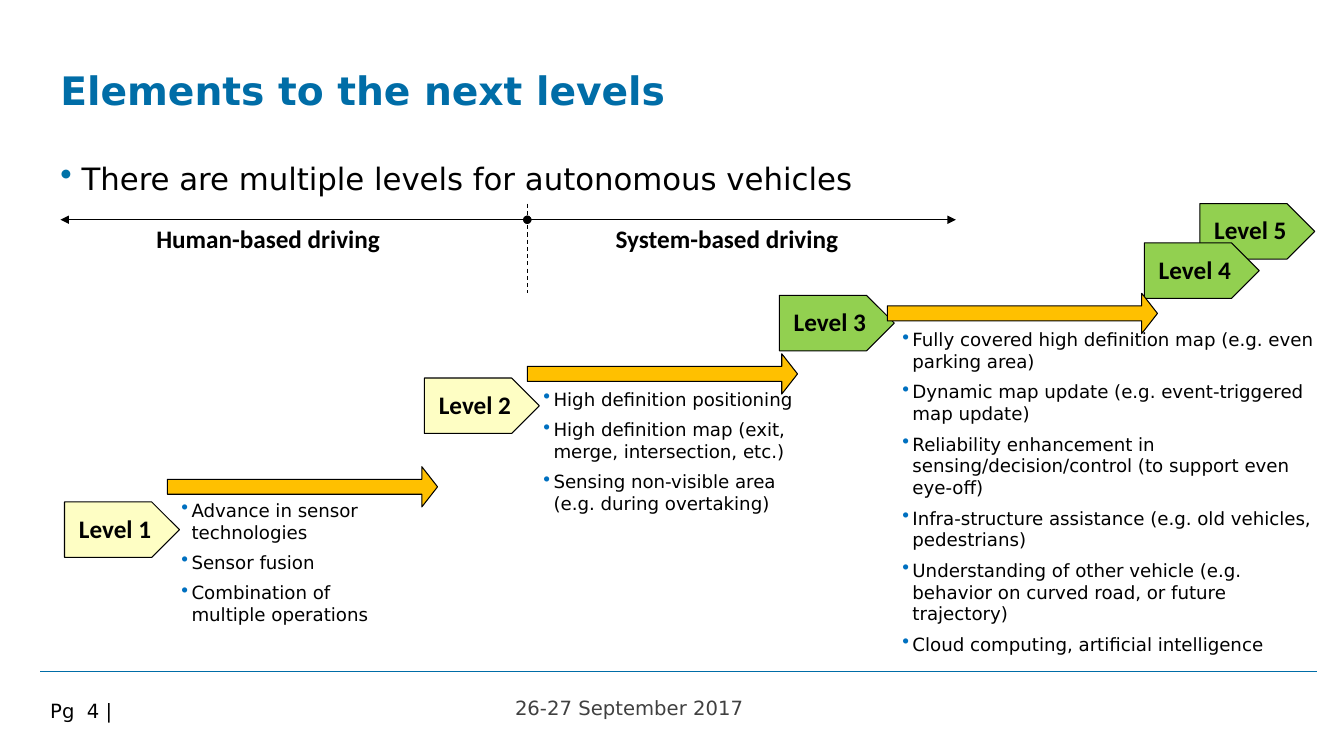
import pptx
import pptx.util
import pptx.dml.color
import pptx.enum.dml
import pptx.enum.shapes
import pptx.enum.text
import pptx.oxml
import pptx.oxml.ns

Inches = pptx.util.Inches
Pt = pptx.util.Pt
ALIGN = pptx.enum.text.PP_ALIGN
ANCHOR = pptx.enum.text.MSO_ANCHOR
SHAPE = pptx.enum.shapes.MSO_SHAPE

COLORS = {
    "blue": "006DA7",
    "bullet": "0072A8",
    "list bullet": "0070C0",
    "black": "000000",
    "gray": "404040",
    "green": "92D050",
    "yellow": "FEFEC4",
    "orange": "FFC000",
}

FONTS = {
    "title": {"name": "DejaVu Sans", "size": Pt(28), "bold": True},
    "subtitle": {"name": "DejaVu Sans", "size": Pt(22)},
    "list": {"name": "DejaVu Sans", "size": Pt(13)},
    "footer": {"name": "DejaVu Sans", "size": Pt(14)},
    "label": {"name": "Calibri", "size": Pt(18), "bold": True},
}

PARAGRAPHS = {
    "title": {"line_spacing": 0.94},
    "subtitle": {"line_spacing": 1.04},
    "list": {"space_after": Pt(6)},
    "footer": {"line_spacing": 0.93},
    "label": {"line_spacing": 0.93, "alignment": ALIGN.CENTER},
}

BODY_FRAME = {"margin_left": 0, "margin_top": Inches(0.02),
              "margin_right": 0, "margin_bottom": 0}
MIDDLE_FRAME = {"vertical_anchor": ANCHOR.MIDDLE}

TITLE = "Elements to the next levels"
SUBTITLE = "There are multiple levels for autonomous vehicles"
FOOTERS = [
    ("26-27 September 2017", (5.01, 6.88, 3.86, 0.34), "gray"),
    ("Pg  4 |", (0.4, 6.91, 2.76, 0.39), "black"),
]

LEVELS = [
    ("Level 5", 11.9, 2.02, "green"),
    ("Level 4", 11.35, 2.41, "green"),
    ("Level 3", 7.73, 2.93, "green"),
    ("Level 2", 4.21, 3.75, "yellow"),
    ("Level 1", 0.64, 4.98, "yellow"),
]

STEPS = [
    ((8.8, 2.91), (8.95, 3.24, 4.09, 3.14), [
        "Fully covered high definition map (e.g. even parking area)",
        "Dynamic map update (e.g. event-triggered map update)",
        "Reliability enhancement in sensing/decision/control (to support even eye-off)",
        "Infra-structure assistance (e.g. old vehicles, pedestrians)",
        "Understanding of other vehicle (e.g. behavior on curved road, or future trajectory)",
        "Cloud computing, artificial intelligence",
    ]),
    ((5.23, 3.51), (5.39, 3.83, 2.69, 2.45), [
        "High definition positioning",
        "High definition map (exit, merge, intersection, etc.)",
        "Sensing non-visible area (e.g. during overtaking)",
    ]),
    ((1.66, 4.63), (1.8, 4.93, 2.13, 1.47), [
        "Advance in sensor technologies",
        "Sensor fusion",
        "Combination of multiple operations",
    ]),
]

DIVIDE_X, AXIS_Y = 5.23, 2.18
DRIVING_MODES = [("Human-based driving", 0.6, 1.39), ("System-based driving", 9.48, 5.94)]


def rgb(color):
    return pptx.dml.color.RGBColor.from_string(COLORS[color])


def apply(target, values):
    for name, value in values.items():
        setattr(target, name, value)


def add_element(parent, tag, **attributes):
    element = pptx.oxml.parse_xml(f"<{tag} {pptx.oxml.ns.nsdecls('a')}/>")
    for name, value in attributes.items():
        element.set(name, value)
    parent.append(element)
    return element


def add_bullet(paragraph, color, indent):
    properties = paragraph._p.get_or_add_pPr()
    properties.set("marL", str(Inches(indent)))
    properties.set("indent", str(-Inches(indent)))
    add_element(add_element(properties, "a:buClr"), "a:srgbClr", val=COLORS[color])
    add_element(properties, "a:buSzPct", val="110000")
    add_element(properties, "a:buChar", char="•")


def write(shape, lines, style, color="black", frame=None, bullet=None):
    text_frame = shape.text_frame
    text_frame.word_wrap = True
    apply(text_frame, frame or {})
    for index, line in enumerate(lines):
        paragraph = text_frame.add_paragraph() if index else text_frame.paragraphs[0]
        if bullet:
            add_bullet(paragraph, *bullet)
        apply(paragraph, PARAGRAPHS[style])
        run = paragraph.add_run()
        run.text = line
        apply(run.font, FONTS[style])
        run.font.color.rgb = rgb(color)


def add_text(slide, box, lines, style, **options):
    shape = slide.shapes.add_textbox(*map(Inches, box))
    write(shape, lines, style, **options)


def add_block(slide, kind, box, color, adjustments):
    shape = slide.shapes.add_shape(kind, *map(Inches, box))
    shape.shadow.inherit = False
    for index, value in enumerate(adjustments):
        shape.adjustments[index] = value
    shape.fill.solid()
    shape.fill.fore_color.rgb = rgb(color)
    shape.line.color.rgb = rgb("black")
    shape.line.width = Pt(0.75)
    return shape


def add_line(slide, start, end, color="black", dashed=False, arrow=False):
    connector = slide.shapes.add_connector(
        pptx.enum.shapes.MSO_CONNECTOR.STRAIGHT, *map(Inches, start + end))
    connector.line.color.rgb = rgb(color)
    connector.line.width = Pt(0.75)
    if dashed:
        connector.line.dash_style = pptx.enum.dml.MSO_LINE.DASH
    if arrow:
        line = connector.line._get_or_add_ln()
        add_element(line, "a:headEnd", type="oval")
        add_element(line, "a:tailEnd", type="triangle")
    add_element(connector._element.spPr, "a:effectLst")


def main():
    presentation = pptx.Presentation()
    presentation.slide_width = Inches(13.33)
    presentation.slide_height = Inches(7.5)
    slide = presentation.slides.add_slide(presentation.slide_layouts[6])

    add_line(slide, (0.4, 6.66), (13.06, 6.66), "blue")
    for text, box, color in FOOTERS:
        add_text(slide, box, [text], "footer", color=color)
    add_text(slide, (0.6, 0.68, 12.06, 0.71), [TITLE], "title",
             color="blue", frame=BODY_FRAME)
    add_text(slide, (0.6, 1.55, 11.73, 0.45), [SUBTITLE], "subtitle",
             frame=BODY_FRAME, bullet=("bullet", 0.21))

    for name, left, top, color in LEVELS:
        level = add_block(slide, SHAPE.PENTAGON, (left, top, 1.14, 0.55), color, [0.5])
        write(level, [name], "label", frame=MIDDLE_FRAME)

    for position, box, elements in STEPS:
        add_block(slide, SHAPE.RIGHT_ARROW, position + (2.68, 0.4), "orange", [0.37, 0.39])
        add_text(slide, box, elements, "list", frame=BODY_FRAME,
                 bullet=("list bullet", 0.1))

    add_line(slide, (DIVIDE_X, 2.02), (DIVIDE_X, 2.91), dashed=True)
    for mode, end_x, label_left in DRIVING_MODES:
        add_line(slide, (DIVIDE_X, AXIS_Y), (end_x, AXIS_Y), arrow=True)
        add_text(slide, (label_left, 2.03, 2.54, 0.71), [mode], "label", frame=MIDDLE_FRAME)

    presentation.save("out.pptx")


if __name__ == "__main__":
    main()
